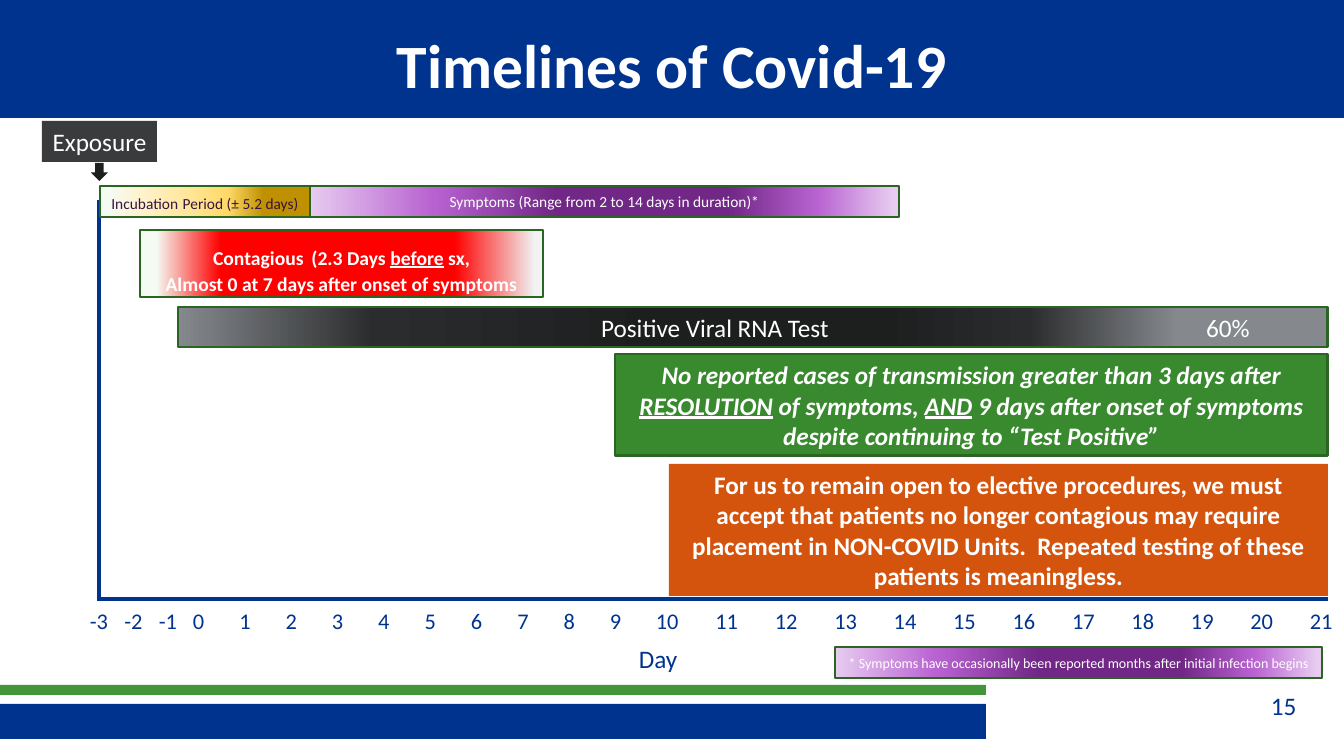
from dataclasses import dataclass
from lxml import etree
from pptx import Presentation
from pptx.dml.color import RGBColor
from pptx.enum.shapes import MSO_CONNECTOR, MSO_SHAPE
from pptx.enum.text import MSO_ANCHOR, PP_ALIGN
from pptx.oxml.ns import qn
from pptx.util import Pt

PX = 914400 / 100.8  # EMU in one px


@dataclass(frozen=True)
class Theme:
    font: str = "Calibri"
    blue: str = "00338E"
    stripe: str = "439539"
    border: str = "2A6523"
    green: str = "39892F"
    orange: str = "D5540D"
    gray: str = "393B3D"
    black: str = "1D1E1E"
    plum: str = "381442"
    white: str = "FFFFFF"
    title: int = 44
    gap: int = 24
    body: int = 18
    tick: int = 16
    label: int = 14
    small: int = 11
    note: int = 10


T = Theme()

# Gradients as (position in percent, colour)
VIRAL = [(0, "85898D"), (17, "2B2C2E"), (42, "1D1E1E"),
         (61, "1D1E1E"), (74, "2B2C2E"), (87, "85898D")]
SYMPTOMS = [(0, "E7CBF0"), (21, "B862D1"), (42, "702785"),
            (71, "702785"), (86, "B862D1"), (99, "E7CBF0")]
CONTAGIOUS = [(4, "F4FBF3"), (20, "FF0000"), (42, "FF0000"),
              (61, "FF0000"), (78, "FF0000"), (98, "F2F2F2")]
INCUBATION = [(4, "F4FBF3"), (20, "FFF2CC"), (42, "FFE699"),
              (61, "FFD966"), (78, "BF9000")]


def emu(*lengths):
    return [round(n * PX) for n in lengths]


def rgb(color):
    return RGBColor.from_string(color)


def set_gradient(sp, stops):
    sp.fill.gradient()
    sp.fill.gradient_angle = 0
    gs_lst = sp._element.spPr.find(".//" + qn("a:gsLst"))
    for gs in list(gs_lst):
        gs_lst.remove(gs)
    for pos, color in stops:
        gs = etree.SubElement(gs_lst, qn("a:gs"), pos=str(pos * 1000))
        etree.SubElement(gs, qn("a:srgbClr"), val=color)


def add_tabs(p, stops):
    tab_lst = etree.SubElement(p._p.get_or_add_pPr(), qn("a:tabLst"))
    for stop in stops:
        etree.SubElement(tab_lst, qn("a:tab"), pos=str(round(stop * PX)), algn="ctr")


def add_run(p, text, size, color=T.white, bold=False, italic=False, underline=False):
    r = p.add_run()
    r.text = text
    f = r.font
    f.name, f.size, f.color.rgb = T.font, Pt(size), rgb(color)
    f.bold, f.italic, f.underline = bold, italic, underline


def write(sp, *lines, align=PP_ALIGN.CENTER, anchor=MSO_ANCHOR.MIDDLE, wrap=True, tabs=()):
    """Each line is a list of (text, size, style) runs."""
    tf = sp.text_frame
    tf.word_wrap, tf.vertical_anchor = wrap, anchor
    for i, runs in enumerate(lines):
        p = tf.add_paragraph() if i else tf.paragraphs[0]
        p.alignment = align
        if tabs:
            add_tabs(p, tabs)
        for text, size, style in runs:
            add_run(p, text, size, **style)


def add_box(s, box, fill, border=None, kind=MSO_SHAPE.RECTANGLE):
    sp = s.shapes.add_shape(kind, *emu(*box))
    sp.shadow.inherit = False
    if isinstance(fill, str):
        sp.fill.solid()
        sp.fill.fore_color.rgb = rgb(fill)
    else:
        set_gradient(sp, fill)
    if border:
        sp.line.color.rgb, sp.line.width = rgb(border), Pt(2)
    else:
        sp.line.fill.background()
    return sp


def add_label(s, box, text, size, wrap=False):
    write(s.shapes.add_textbox(*emu(*box)), [(text, size, {"color": T.blue})],
          align=PP_ALIGN.LEFT, anchor=MSO_ANCHOR.TOP, wrap=wrap)


def add_line(s, x1, y1, x2, y2):
    line = s.shapes.add_connector(MSO_CONNECTOR.STRAIGHT, *emu(x1, y1, x2, y2))
    line.line.color.rgb, line.line.width = rgb(T.blue), Pt(2.5)
    etree.SubElement(line._element.spPr, qn("a:effectLst"))


def header(s, x, y, w, h):
    add_box(s, (x, y, w, h), T.blue)
    title = s.shapes.add_textbox(*emu(x + 67, y + 17, w - 134, 93))
    write(title, [("Timelines of Covid-19", T.title, {"bold": True})])


def footer(s, x, y, w, h):
    add_box(s, (x, y + 19, w, h - 19), T.blue)
    add_box(s, (x, y, w, 10), T.stripe)
    add_label(s, (1261, y, 46, 40), "15", T.body)


def axis(s, x, y, w, h):
    add_line(s, x, y, x, y + h)
    add_line(s, x - 2, y + h, x + w, y + h)
    # Day ranges, each evenly spaced: first day, last day, first left, last left, width
    for first, last, left, right, width in (
            (-3, -1, -19, 50, 42), (0, 9, 84, 501, 34), (10, 21, 547, 1201, 47)):
        step = (right - left) / (last - first)
        for day in range(first, last + 1):
            tick_x = x + left + (day - first) * step
            add_label(s, (tick_x, y + h + 3, width, 37), str(day), T.tick, wrap=True)
    add_label(s, (x + 530, y + h + 39, 60, 40), "Day", T.body)


def exposure(s, x, y, w, h):
    tag = add_box(s, (x, y, w, 41), T.gray)
    write(tag, [("Exposure", T.body, {})], wrap=False)
    add_box(s, (x + w // 2 - 8, y + h - 18, 17, 18), T.black, kind=MSO_SHAPE.DOWN_ARROW)


def bars(s, x, y, right):
    """Periods from the exposure line at x, ending at the right edge."""
    bold = {"bold": True}
    plum = {"color": T.plum}

    viral = add_box(s, (x + 78, y + 121, right - x - 78, 40), VIRAL, T.border)
    write(viral, [("\tPositive Viral RNA Test\t60%", T.body, {})],
          align=PP_ALIGN.LEFT, tabs=(527, 1040))

    symptoms = add_box(s, (x + 210, y, 589, 31), SYMPTOMS, T.border)
    write(symptoms, [("Symptoms (Range from 2 to 14 days in duration)*", T.small, {})])

    contagious = add_box(s, (x + 40, y + 44, 403, 67), CONTAGIOUS, T.border)
    write(contagious,
          [("Contagious", T.label, bold), (" ", T.gap, bold), ("(2.3 Days ", T.label, bold),
           ("before", T.label, {"bold": True, "underline": True}), (" sx,", T.label, bold)],
          [("Almost 0 at 7 days after onset of symptoms", T.label, bold)])

    incubation = add_box(s, (x, y, 210, 31), INCUBATION, T.border)
    write(incubation, [("Incubation", T.small, plum), (" ", T.label, {}),
                       ("Period (± 5.2 days)", T.small, plum)])


def messages(s, x, y, w):
    plain = {"bold": True, "italic": True}
    under = {**plain, "underline": True}

    transmission = add_box(s, (x, y, w, 102), T.green, T.border)
    write(transmission, [
        ("No reported cases of transmission greater than 3 days after ", T.body, plain),
        ("RESOLUTION", T.body, under), (" of symptoms, ", T.body, plain),
        ("AND", T.body, under),
        (" 9 days after onset of symptoms despite continuing to “Test Positive”", T.body, plain)])

    policy = add_box(s, (x + 54, y + 110, w - 54, 132), T.orange)
    write(policy, [(
        "For us to remain open to elective procedures, we must accept that patients "
        "no longer contagious may require placement in NON-COVID Units.  Repeated "
        "testing of these patients is meaningless.", T.body, {"bold": True})])


def footnote(s, x, y, w, h):
    sp = add_box(s, (x, y, w, h), SYMPTOMS, T.border)
    write(sp, [("* Symptoms have occasionally been reported months after initial "
                "infection begins", T.note, {})])


def main():
    prs = Presentation()
    prs.slide_width, prs.slide_height = emu(1344, 756)
    s = prs.slides.add_slide(prs.slide_layouts[6])
    header(s, 0, 0, 1344, 118)
    footer(s, -3, 685, 989, 54)
    axis(s, 99, 200, 1229, 399)
    bars(s, 100, 186, 1328)
    messages(s, 615, 354, 713)
    footnote(s, 835, 647, 487, 31)
    exposure(s, 42, 121, 115, 60)
    prs.save("out.pptx")


if __name__ == "__main__":
    main()
